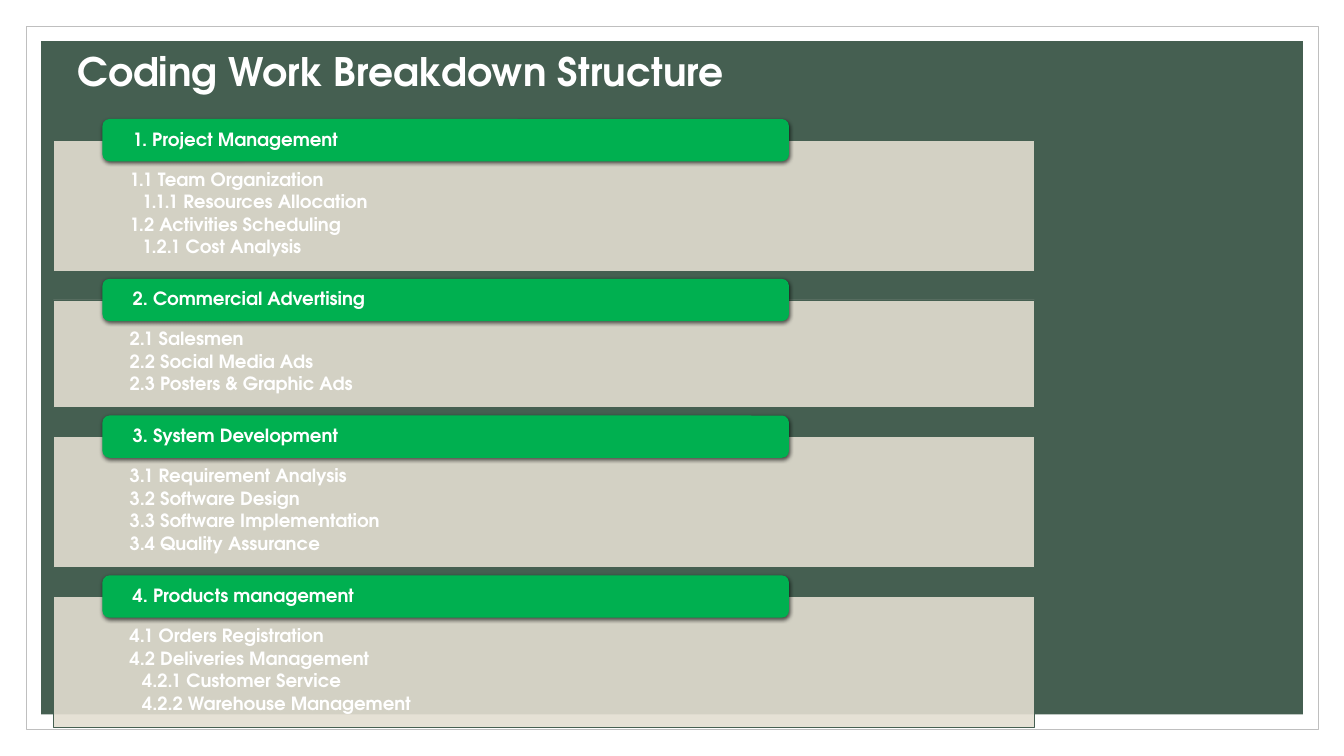
from dataclasses import dataclass

from lxml import etree
from pptx import Presentation
from pptx.dml.color import RGBColor
from pptx.enum.shapes import MSO_SHAPE
from pptx.enum.text import MSO_ANCHOR, MSO_AUTO_SIZE, PP_ALIGN
from pptx.oxml.ns import qn
from pptx.util import Pt

RECTANGLE = MSO_SHAPE.RECTANGLE
ROUNDED = MSO_SHAPE.ROUNDED_RECTANGLE
TOP, MIDDLE = MSO_ANCHOR.TOP, MSO_ANCHOR.MIDDLE
LEFT = PP_ALIGN.LEFT
TITLE_ONLY = 5


@dataclass(frozen=True)
class Theme:
    font: str = "TeX Gyre Adventor"
    title_size: float = 28
    body_size: float = 13
    paper: str = "FFFFFF"
    frame: str = "BFBFBF"
    board: str = "455F51"
    panel: str = "E3DED1"
    header: str = "00B050"
    text: str = "FFFFFF"
    shadow: str = "000000"


THEME = Theme()

PANEL_LEFT, PANEL_WIDTH = 38.2, 700.6
FIRST_PANEL_TOP, PANEL_GAP = 100.1, 20.6
PANEL_PADDING, ITEM_HEIGHT = 27.2, 16.6
HEADER_LEFT, HEADER_WIDTH, HEADER_HEIGHT = 73.2, 490.4, 30.2
INDENT = 9

# Each section: heading, then (level, item) pairs
SECTIONS = [
    ("1. Project Management", [
        (1, "1.1 Team Organization"),
        (2, "1.1.1 Resources Allocation"),
        (1, "1.2 Activities Scheduling"),
        (2, "1.2.1 Cost Analysis"),
    ]),
    ("2. Commercial Advertising", [
        (1, "2.1 Salesmen"),
        (1, "2.2 Social Media Ads"),
        (1, "2.3 Posters & Graphic Ads"),
    ]),
    ("3. System Development", [
        (1, "3.1 Requirement Analysis"),
        (1, "3.2 Software Design"),
        (1, "3.3 Software Implementation"),
        (1, "3.4 Quality Assurance"),
    ]),
    ("4. Products management", [
        (1, "4.1 Orders Registration"),
        (1, "4.2 Deliveries Management"),
        (2, "4.2.1 Customer Service"),
        (2, "4.2.2 Warehouse Management"),
    ]),
]


def add_block(slide, kind, left, top, width, height, fill, line=None):
    shape = slide.shapes.add_shape(kind, Pt(left), Pt(top), Pt(width), Pt(height))
    shape.shadow.inherit = False
    shape.fill.solid()
    shape.fill.fore_color.rgb = RGBColor.from_string(fill)
    if line:
        shape.line.color.rgb = RGBColor.from_string(line)
        shape.line.width = Pt(0.5)
    else:
        shape.line.fill.background()
    return shape


def set_opacity(color_element, percent):
    etree.SubElement(color_element, qn("a:alpha"), val=str(percent * 1000))


def add_drop_shadow(shape):
    effects = shape.element.spPr.find(qn("a:effectLst"))
    shadow = etree.SubElement(
        effects, qn("a:outerShdw"), blurRad=str(Pt(3)), dist=str(Pt(1)),
        dir=str(90 * 60000), algn="ctr", rotWithShape="0")
    color = etree.SubElement(shadow, qn("a:srgbClr"), val=THEME.shadow)
    set_opacity(color, 63)


def prepare_frame(shape, anchor, insets):
    """Set the anchor and the left, top, right and bottom insets."""
    frame = shape.text_frame
    frame.word_wrap = True
    frame.auto_size = MSO_AUTO_SIZE.NONE
    frame.vertical_anchor = anchor
    (frame.margin_left, frame.margin_top,
     frame.margin_right, frame.margin_bottom) = map(Pt, insets)
    return frame


def write(paragraph, text, size):
    paragraph.alignment = LEFT
    paragraph.line_spacing = 0.9
    run = paragraph.add_run()
    run.text = text
    run.font.name = THEME.font
    run.font.size = Pt(size)
    run.font.bold = True
    run.font.color.rgb = RGBColor.from_string(THEME.text)


def add_title(slide, text):
    title = slide.shapes.title
    title.left, title.top, title.width, title.height = map(Pt, (48.2, 31, 676.8, 43.2))
    frame = prepare_frame(title, MIDDLE, (7.2, 3.6, 7.2, 3.6))
    write(frame.paragraphs[0], text, THEME.title_size)
    slide.shapes.element.append(title.element)  # bring in front of the board


def add_panel(slide, top, height, items):
    panel = add_block(slide, RECTANGLE, PANEL_LEFT, top, PANEL_WIDTH, height,
                      THEME.panel, THEME.board)
    set_opacity(panel.element.spPr.find(qn("a:solidFill"))[0], 90)
    frame = prepare_frame(panel, TOP, (54.4, 21.6, 54.4, 7.2))
    for index, (level, text) in enumerate(items):
        paragraph = frame.add_paragraph() if index else frame.paragraphs[0]
        write(paragraph, text, THEME.body_size)
        paragraph.level = level
        paragraph.space_after = Pt(2)
        properties = paragraph.element.get_or_add_pPr() if hasattr(paragraph, "element") \
            else paragraph._p.get_or_add_pPr()
        properties.set("marL", str(Pt(INDENT * level)))
        properties.set("indent", str(-Pt(INDENT)))


def add_header(slide, top, text):
    header = add_block(slide, ROUNDED, HEADER_LEFT, top, HEADER_WIDTH, HEADER_HEIGHT,
                       THEME.header)
    add_drop_shadow(header)
    frame = prepare_frame(header, MIDDLE, (20.2, 0, 20.2, 0))
    write(frame.paragraphs[0], text, THEME.body_size)


def main():
    presentation = Presentation()
    presentation.slide_width, presentation.slide_height = Pt(960), Pt(540)
    slide = presentation.slides.add_slide(presentation.slide_layouts[TITLE_ONLY])

    add_block(slide, RECTANGLE, 18.7, 18.7, 923, 502.6, THEME.paper, THEME.frame)
    add_block(slide, RECTANGLE, 29.3, 29.3, 901.4, 481, THEME.board)
    add_title(slide, "Coding Work Breakdown Structure")

    top = FIRST_PANEL_TOP
    for heading, items in SECTIONS:
        height = PANEL_PADDING + ITEM_HEIGHT * len(items)
        add_panel(slide, top, height, items)
        add_header(slide, top - HEADER_HEIGHT / 2, heading)
        top += height + PANEL_GAP

    presentation.save("out.pptx")


if __name__ == "__main__":
    main()
